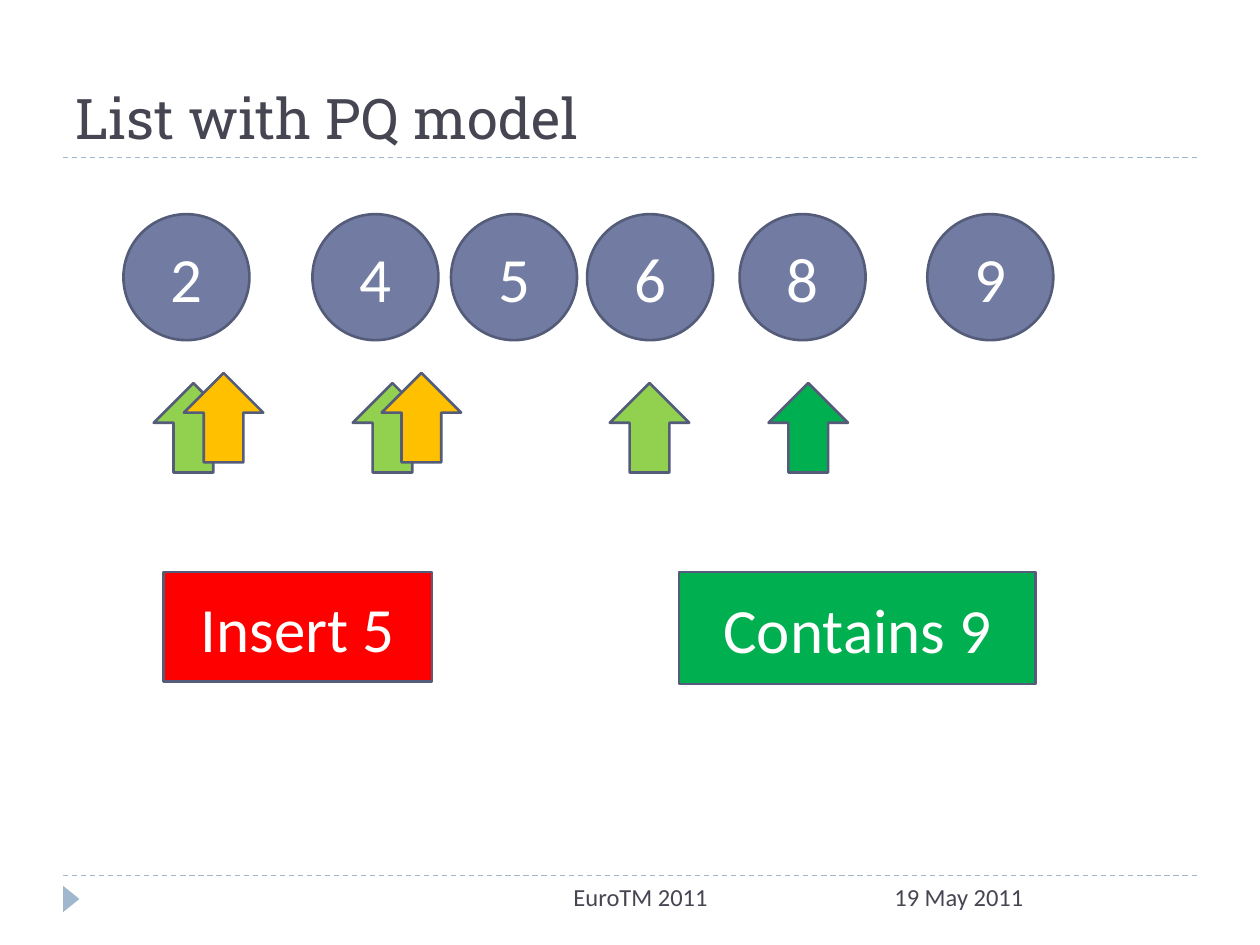
"""Build the slide showing a sorted list with the PQ model."""
from lxml import etree
from pptx import Presentation
from pptx.dml.color import RGBColor
from pptx.enum.dml import MSO_LINE
from pptx.enum.shapes import MSO_CONNECTOR, MSO_SHAPE
from pptx.enum.text import MSO_ANCHOR, PP_ALIGN
from pptx.oxml.ns import qn
from pptx.util import Inches, Pt

DASH = MSO_LINE.DASH
STRAIGHT = MSO_CONNECTOR.STRAIGHT
OVAL, ARROW, BOX, TRIANGLE = (MSO_SHAPE.OVAL, MSO_SHAPE.UP_ARROW,
                              MSO_SHAPE.RECTANGLE, MSO_SHAPE.ISOSCELES_TRIANGLE)
BOTTOM, MIDDLE = MSO_ANCHOR.BOTTOM, MSO_ANCHOR.MIDDLE
LEFT, CENTER = PP_ALIGN.LEFT, PP_ALIGN.CENTER

COLORS = {name: RGBColor.from_string(value) for name, value in {
    "text": "464653", "rule": "9FB8CD", "node": "727CA3", "outline": "545C79",
    "white": "FFFFFF", "lime": "92D050", "green": "00B050",
    "amber": "FFC000", "red": "FF0000"}.items()}
MARGIN, RIGHT = 0.5, 9.5
TITLE_RULE, FOOTER_RULE = 1.25, 6.95
NODE_ROW, ARROW_ROW, FRONT_ARROW_ROW, BOX_ROW = 1.7, 3.04, 2.96, 4.54


def write(sp, text, size, color, align, font="Calibri"):
    tf = sp.text_frame
    tf.word_wrap = True
    p = tf.paragraphs[0]
    p.text = text
    p.alignment = align
    p.font.size = Pt(size)
    p.font.name = font
    p.font.color.rgb = COLORS[color]
    return tf


def add_shape(kind, x, y, w, h, fill, text=""):
    sp = s.shapes.add_shape(kind, Inches(x), Inches(y), Inches(w), Inches(h))
    sp.shadow.inherit = False
    sp.fill.solid()
    sp.fill.fore_color.rgb = COLORS[fill]
    sp.line.color.rgb = COLORS["outline"]
    sp.line.width = Pt(1.5)
    if text:
        write(sp, text, 36, "white", CENTER).vertical_anchor = MIDDLE
    return sp


prs = Presentation()
prs.slide_width, prs.slide_height = Inches(10), Inches(7.5)
s = prs.slides.add_slide(prs.slide_layouts[5])

for y in (FOOTER_RULE, TITLE_RULE):
    rule = s.shapes.add_connector(STRAIGHT, Inches(MARGIN), Inches(y), Inches(RIGHT), Inches(y))
    rule.line.color.rgb = COLORS["rule"]
    rule.line.width = Pt(0.75)
    rule.line.dash_style = DASH
    etree.SubElement(rule._element.spPr, qn("a:effectLst"))

marker = add_shape(TRIANGLE, 0.46, 7.07, 0.21, 0.13, "rule")
marker.rotation = 90
marker.line.fill.background()

title = s.shapes.title
title.left, title.top = Inches(MARGIN), Inches(0.17)
title.width, title.height = Inches(RIGHT - MARGIN), Inches(TITLE_RULE - 0.17)
write(title, "List with PQ model", 32, "text", LEFT, "Roboto Slab").vertical_anchor = BOTTOM

for text, x, w, align in (("19 May 2011", 7, 2.5, LEFT), ("EuroTM 2011", 3.17, 3.83, CENTER)):
    footer = s.shapes.add_textbox(Inches(x), Inches(FOOTER_RULE), Inches(w), Inches(0.4))
    write(footer, text, 14, "text", align)

for text, x in (("2", 0.98), ("4", 2.48), ("6", 4.66), ("8", 5.87), ("9", 7.36), ("5", 3.58)):
    add_shape(OVAL, x, NODE_ROW, 1, 1, "node", text)

for x, y, fill in ((1.22, ARROW_ROW, "lime"), (2.8, ARROW_ROW, "lime"),
                   (4.84, ARROW_ROW, "lime"), (6.1, ARROW_ROW, "green"),
                   (1.46, FRONT_ARROW_ROW, "amber"), (3.03, FRONT_ARROW_ROW, "amber")):
    add_shape(ARROW, x, y, 0.63, 0.71, fill)

for text, x, w, h, fill in (("Insert 5", 1.3, 2.13, 0.87, "red"),
                            ("Contains 9", 5.39, 2.83, 0.89, "green")):
    add_shape(BOX, x, BOX_ROW, w, h, fill, text)

prs.save("out.pptx")
